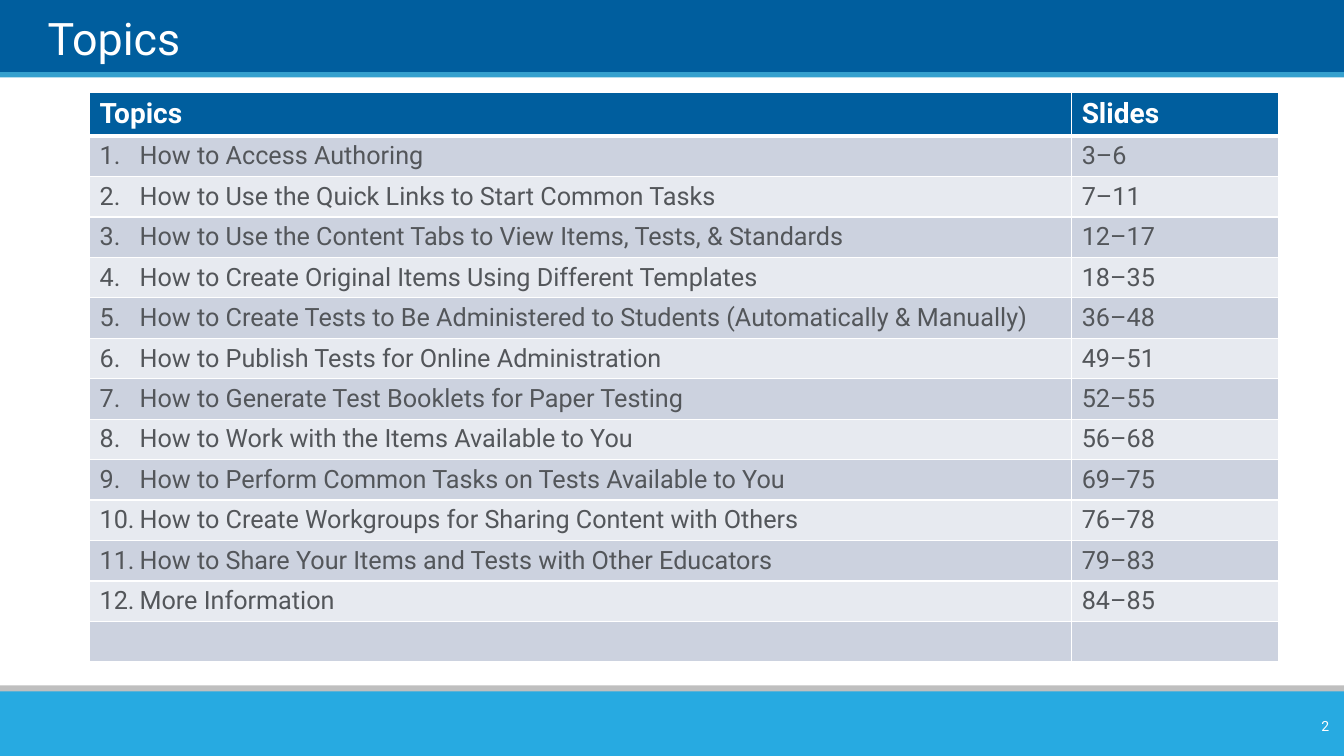
from lxml import etree
from pptx import Presentation
from pptx.dml.color import RGBColor
from pptx.enum.shapes import MSO_SHAPE
from pptx.enum.text import MSO_ANCHOR, PP_ALIGN
from pptx.oxml.ns import qn
from pptx.util import Pt

RECTANGLE = MSO_SHAPE.RECTANGLE
TOP, MIDDLE, BOTTOM = MSO_ANCHOR.TOP, MSO_ANCHOR.MIDDLE, MSO_ANCHOR.BOTTOM
LEFT, RIGHT = PP_ALIGN.LEFT, PP_ALIGN.RIGHT

FONT = "Roboto"
WHITE, NAVY, GREY = "FFFFFF", "005E9E", "53565A"
ROW_FILLS = ["CCD2DF", "E7EAF0"]
SLIDE_WIDTH, SLIDE_HEIGHT = 960, 540
HEADER_HEIGHT, ROW_HEIGHT = 30.5, 28.9
COLUMN_WIDTHS = [701.5, 147.5]
NUMBER_WIDTH = 28.5

TOPICS = [
    ("How to Access Authoring", "3–6"),
    ("How to Use the Quick Links to Start Common Tasks", "7–11"),
    ("How to Use the Content Tabs to View Items, Tests, & Standards", "12–17"),
    ("How to Create Original Items Using Different Templates", "18–35"),
    ("How to Create Tests to Be Administered to Students (Automatically & Manually)", "36–48"),
    ("How to Publish Tests for Online Administration", "49–51"),
    ("How to Generate Test Booklets for Paper Testing", "52–55"),
    ("How to Work with the Items Available to You", "56–68"),
    ("How to Perform Common Tasks on Tests Available to You", "69–75"),
    ("How to Create Workgroups for Sharing Content with Others", "76–78"),
    ("How to Share Your Items and Tests with Other Educators", "79–83"),
    ("More Information", "84–85"),
]


def rgb(hex_color):
    """Turn a hex string into a colour."""
    return RGBColor.from_string(hex_color)


def write(frame, text, size=18, color=GREY, bold=False, align=LEFT, tab=None):
    """Write one formatted paragraph into a text frame."""
    paragraph = frame.paragraphs[0]
    paragraph.alignment = align
    if tab:
        stops = etree.SubElement(paragraph._p.get_or_add_pPr(), qn("a:tabLst"))
        etree.SubElement(stops, qn("a:tab"), pos=str(Pt(tab)), algn="l")
    run = paragraph.add_run()
    run.text = text
    run.font.name = FONT
    run.font.size = Pt(size)
    run.font.bold = bold
    run.font.color.rgb = rgb(color)


def add_band(slide, top, height, color):
    """Add a full-width coloured band."""
    band = slide.shapes.add_shape(RECTANGLE, 0, Pt(top), Pt(SLIDE_WIDTH), Pt(height))
    band.shadow.inherit = False
    band.fill.solid()
    band.fill.fore_color.rgb = rgb(color)
    band.line.fill.background()


def add_label(slide, box, text, anchor, inset=0, **text_format):
    """Add a text box at left, top, width, height."""
    label = slide.shapes.add_textbox(*(Pt(length) for length in box))
    frame = label.text_frame
    frame.word_wrap = True
    frame.vertical_anchor = anchor
    frame.margin_left = frame.margin_right = Pt(inset)
    frame.margin_top = frame.margin_bottom = Pt(inset / 2)
    write(frame, text, **text_format)


def style_cell(cell, fill, top_line=1, bottom_line=1, anchor=MIDDLE):
    """Fill a cell and give it white borders."""
    cell.vertical_anchor = anchor
    cell.fill.solid()
    cell.fill.fore_color.rgb = rgb(fill)
    properties = cell._tc.get_or_add_tcPr()
    widths = {"lnL": 1, "lnR": 1, "lnT": top_line, "lnB": bottom_line}
    for position, (side, width) in enumerate(widths.items()):
        border = etree.Element(qn(f"a:{side}"), w=str(Pt(width)))
        solid = etree.SubElement(border, qn("a:solidFill"))
        etree.SubElement(solid, qn("a:srgbClr"), val=WHITE)
        properties.insert(position, border)


def add_topics_table(slide):
    """Add the numbered topics with their slide ranges and a blank last row."""
    row_count = len(TOPICS) + 2
    height = HEADER_HEIGHT + ROW_HEIGHT * (row_count - 1)
    table = slide.shapes.add_table(
        row_count, 2, Pt(64), Pt(66), Pt(sum(COLUMN_WIDTHS)), Pt(height)
    ).table
    for column, width in zip(table.columns, COLUMN_WIDTHS):
        column.width = Pt(width)
    for index, row in enumerate(table.rows):
        row.height = Pt(ROW_HEIGHT if index else HEADER_HEIGHT)
        for cell in row.cells:
            if index == 0:
                style_cell(cell, NAVY, bottom_line=3, anchor=TOP)
            else:
                style_cell(cell, ROW_FILLS[(index - 1) % 2], top_line=3 if index == 1 else 1)
    for column, heading in enumerate(["Topics", "Slides"]):
        write(table.cell(0, column).text_frame, heading, size=20, color=WHITE, bold=True)
    for number, (topic, slide_range) in enumerate(TOPICS, start=1):
        write(table.cell(number, 0).text_frame, f"{number}.\t{topic}", tab=NUMBER_WIDTH)
        write(table.cell(number, 1).text_frame, slide_range)


def main():
    """Build the topics slide and save it."""
    presentation = Presentation()
    presentation.slide_width = Pt(SLIDE_WIDTH)
    presentation.slide_height = Pt(SLIDE_HEIGHT)
    slide = presentation.slides.add_slide(presentation.slide_layouts[6])
    add_band(slide, -0.7, 54, NAVY)
    add_band(slide, 51.5, 3.8, "35A0CE")
    add_band(slide, 489.6, 10, "BFBFBF")
    add_band(slide, 493.9, 46.1, "27AAE1")
    add_label(slide, (34, 5, 867.5, 41), "Topics", BOTTOM, size=32, color=WHITE)
    add_topics_table(slide)
    add_label(slide, (901, 507.5, 55.5, 21.5), "2", MIDDLE, inset=7.2,
              size=10, color=WHITE, align=RIGHT)
    presentation.save("out.pptx")


if __name__ == "__main__":
    main()
